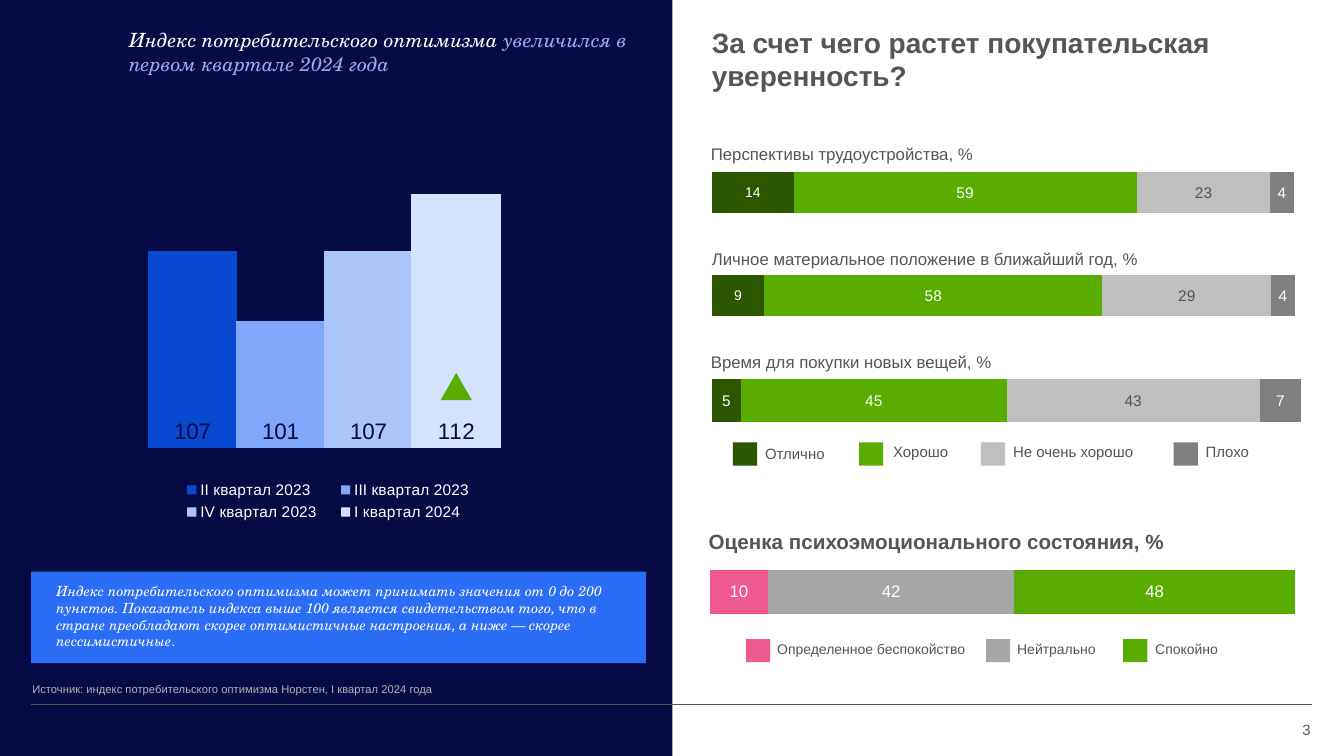
from dataclasses import dataclass

from lxml import etree
from pptx import Presentation, util as u
from pptx.chart import data as chart_data
from pptx.dml import color
from pptx.enum import chart as ch, shapes as sh, text as tx
from pptx.oxml import ns

SANS, SERIF = "Arial", "TeX Gyre Schola"
NAVY, WHITE, GREY = "060A45", "FFFFFF", "555555"
DARK_GREEN, GREEN, SILVER, STEEL = "2D5600", "59AD00", "BFBFBF", "808080"
PINK, NEUTRAL = "EF5890", "A6A6A6"
NO_SIDE_INSET = 0.0


@dataclass
class Box:
    left: float
    top: float
    width: float
    height: float

    def emu(self) -> list:
        return [u.Inches(v) for v in (self.left, self.top, self.width, self.height)]


@dataclass
class Run:
    text: str
    size: float
    ink: str = GREY
    font: str = SANS
    bold: bool = False
    italic: bool = False


@dataclass
class Series:
    name: str
    value: int
    fill: str
    ink: str = WHITE
    size: float = 11


@dataclass
class Rating:
    heading: str
    heading_box: Box
    chart_box: Box
    plot: tuple
    values: tuple
    first_size: float = 10


@dataclass
class Key:
    text: str
    fill: str
    left: float
    label_box: Box


def rgb(hex_code: str) -> color.RGBColor:
    return color.RGBColor.from_string(hex_code)


def add_block(shapes, box: Box, fill: str, kind=sh.MSO_SHAPE.RECTANGLE) -> None:
    block = shapes.add_shape(kind, *box.emu())
    block.shadow.inherit = False
    block.fill.solid()
    block.fill.fore_color.rgb = rgb(fill)
    block.line.fill.background()


def add_text(shapes, box: Box, runs: list[Run], side=0.1, top=0.05, bottom=0.05,
             anchor=tx.MSO_ANCHOR.TOP, align=tx.PP_ALIGN.LEFT, grow=False) -> None:
    frame = shapes.add_textbox(*box.emu()).text_frame
    frame.word_wrap = True
    frame.auto_size = tx.MSO_AUTO_SIZE.SHAPE_TO_FIT_TEXT if grow else tx.MSO_AUTO_SIZE.NONE
    frame.vertical_anchor = anchor
    frame.margin_left = frame.margin_right = u.Inches(side)
    frame.margin_top, frame.margin_bottom = u.Inches(top), u.Inches(bottom)
    paragraph = frame.paragraphs[0]
    paragraph.alignment = align
    for item in runs:
        run = paragraph.add_run()
        run.text = item.text
        set_font(run.font, item.size, item.ink, item.font)
        run.font.bold, run.font.italic = item.bold, item.italic


def set_font(font, size: float, ink: str, name: str = SANS) -> None:
    font.size, font.name = u.Pt(size), name
    font.color.rgb = rgb(ink)


def layout_xml(area: tuple, inner: bool = False):
    """Manual layout element; area is x, y, w, h as fractions of the chart."""
    layout = etree.Element(ns.qn("c:layout"))
    manual = etree.SubElement(layout, ns.qn("c:manualLayout"))
    settings = [("layoutTarget", "inner")] if inner else []
    settings += [("xMode", "edge"), ("yMode", "edge"), *zip("xywh", map(str, area))]
    for tag, value in settings:
        etree.SubElement(manual, ns.qn(f"c:{tag}")).set("val", value)
    return layout


def add_chart(shapes, kind, box: Box, area: tuple, series: list[Series], gap: int,
              overlap: int, position, low=None, high=None):
    data = chart_data.CategoryChartData(number_format="0")
    data.categories = ["1"]
    for item in series:
        data.add_series(item.name, [item.value])
    chart = shapes.add_chart(kind, *box.emu(), data).chart
    chart.has_title = chart.has_legend = False
    set_font(chart.font, 10, GREY)
    for axis in (chart.category_axis, chart.value_axis):
        axis.visible = axis.has_major_gridlines = False
    chart.value_axis.minimum_scale, chart.value_axis.maximum_scale = low, high
    plot = chart.plots[0]
    plot.gap_width, plot.overlap, plot.vary_by_categories = gap, overlap, False
    for drawn, item in zip(plot.series, series):
        drawn.format.fill.solid()
        drawn.format.fill.fore_color.rgb = rgb(item.fill)
        labels = drawn.data_labels
        labels.show_value, labels.position = True, position
        set_font(labels.font, item.size, item.ink)
    plot_area = chart.element.find(".//" + ns.qn("c:plotArea"))
    for old in plot_area.findall(ns.qn("c:layout")):
        plot_area.remove(old)
    plot_area.insert(0, layout_xml(area, inner=True))
    return chart


def add_keys(shapes, keys: list[Key], top: float, size: float) -> None:
    for key in keys:
        add_block(shapes, Box(key.left, top, 0.24, 0.23), key.fill)
        add_text(shapes, key.label_box, [Run(key.text, size)], grow=True)


def add_index_panel(shapes) -> None:
    add_text(shapes, Box(1.28, 0.28, 5.07, 0.57), [
        Run("Индекс потребительского оптимизма ", 14, WHITE, SERIF, italic=True),
        Run("увеличился в первом квартале 2024 года", 14, "A3A9F5", SERIF, italic=True),
    ], side=NO_SIDE_INSET, top=0, bottom=0.07)
    quarters = [("II квартал 2023", 107, "0949D1"), ("III квартал 2023", 101, "80A7FA"),
                ("IV квартал 2023", 107, "ABC5FB"), ("I квартал 2024", 112, "D5E2FD")]
    chart = add_chart(shapes, ch.XL_CHART_TYPE.COLUMN_CLUSTERED, Box(-0.05, 1.25, 6.61, 4),
                      (0.024, 0.082, 0.941, 0.717), [Series(*q, NAVY, 16) for q in quarters],
                      305, 2, ch.XL_LABEL_POSITION.INSIDE_BASE, low=90)
    chart.has_legend = True
    legend = chart.legend
    legend.position, legend.include_in_layout = ch.XL_LEGEND_POSITION.BOTTOM, False
    set_font(legend.font, 11, WHITE)
    legend_xml = chart.element.find(".//" + ns.qn("c:legend"))
    for old in legend_xml.findall(ns.qn("c:layout")):
        legend_xml.remove(old)
    legend_xml.find(ns.qn("c:overlay")).addprevious(layout_xml((0.26, 0.87, 0.48, 0.12)))


def add_ratings(shapes) -> None:
    ratings = [
        Rating("Перспективы трудоустройства, %", Box(7.05, 1.19, 5.99, 0.57),
               Box(6.67, 1.36, 6.45, 1.03), (0.061, 0.3, 0.939, 0.472), (14, 59, 23, 4)),
        Rating("Личное материальное положение в ближайший год, %", Box(7.06, 2.23, 6.65, 0.57),
               Box(7.03, 2.38, 6.1, 1.03), (0.005, 0.3, 0.995, 0.472), (9, 58, 29, 4)),
        Rating("Время для покупки новых вещей, %", Box(7.05, 3.25, 5.99, 0.57),
               Box(7.06, 3.4, 6.22, 1.07), (0, 0.3, 0.987, 0.472), (5, 45, 43, 7), 11),
    ]
    for rating in ratings:
        styles = [(DARK_GREEN, WHITE, rating.first_size), (GREEN, WHITE, 11),
                  (SILVER, GREY, 11), (STEEL, WHITE, 11)]
        series = [Series(f"Series {n}", value, *style)
                  for n, (value, style) in enumerate(zip(rating.values, styles), 1)]
        add_chart(shapes, ch.XL_CHART_TYPE.BAR_STACKED, rating.chart_box, rating.plot, series,
                  20, 100, ch.XL_LABEL_POSITION.CENTER, 0, 105)
        add_text(shapes, rating.heading_box, [Run(rating.heading, 12)], side=NO_SIDE_INSET,
                 top=0.13, bottom=0.13, anchor=tx.MSO_ANCHOR.BOTTOM)
    add_keys(shapes, [
        Key("Отлично", DARK_GREEN, 7.27, Box(7.49, 4.36, 1.14, 0.28)),
        Key("Хорошо", GREEN, 8.52, Box(8.76, 4.34, 1.14, 0.28)),
        Key("Не очень хорошо", SILVER, 9.73, Box(9.95, 4.34, 1.75, 0.28)),
        Key("Плохо", STEEL, 11.64, Box(11.86, 4.34, 1.14, 0.28)),
    ], 4.39, 10.7)


def add_mood(shapes) -> None:
    moods = [Series("Series 1", 10, PINK, size=12), Series("Series 2", 42, NEUTRAL, size=12),
             Series("Series 3", 48, GREEN, size=12)]
    add_chart(shapes, ch.XL_CHART_TYPE.BAR_STACKED_100, Box(6.81, 5.18, 6.21, 1.41),
              (0.037, 0.102, 0.935, 0.783), moods, 150, 100, ch.XL_LABEL_POSITION.CENTER)
    add_text(shapes, Box(6.93, 5.2, 5.82, 0.27),
             [Run("Оценка психоэмоционального состояния, %", 14.7, bold=True)])
    add_keys(shapes.add_group_shape().shapes, [
        Key("Определенное беспокойство", PINK, 7.4, Box(7.61, 6.31, 2.21, 0.27)),
        Key("Нейтрально", NEUTRAL, 9.78, Box(9.99, 6.31, 1.15, 0.27)),
        Key("Спокойно", GREEN, 11.14, Box(11.36, 6.31, 0.93, 0.27)),
    ], 6.34, 10)


def add_footer(shapes) -> None:
    rule = shapes.add_connector(sh.MSO_CONNECTOR.STRAIGHT, u.Inches(0.31), u.Inches(6.99),
                                u.Inches(13.01), u.Inches(6.99))
    rule.line.color.rgb, rule.line.width = rgb(GREY), u.Pt(1)
    etree.SubElement(rule.element.spPr, ns.qn("a:effectLst"))
    source = "Источник: индекс потребительского оптимизма Норстен, I квартал 2024 года"
    add_text(shapes, Box(0.32, 6.7, 6.19, 0.24), [Run(source, 8, "B3B3B3")],
             side=NO_SIDE_INSET, top=0.04, bottom=0.04, anchor=tx.MSO_ANCHOR.BOTTOM)
    add_text(shapes, Box(12.01, 7.04, 0.99, 0.4), [Run("3", 10.7)], side=NO_SIDE_INSET, top=0.04,
             bottom=0.04, anchor=tx.MSO_ANCHOR.MIDDLE, align=tx.PP_ALIGN.RIGHT)


def add_note(shapes) -> None:
    note = ("Индекс потребительского оптимизма может принимать значения от 0 до 200 пунктов. "
            "Показатель индекса выше 100 является свидетельством того, что в стране преобладают "
            "скорее оптимистичные настроения, а ниже — скорее пессимистичные")
    add_block(shapes, Box(0.31, 5.67, 6.1, 0.91), "2C6DF6")
    add_text(shapes, Box(0.46, 5.73, 5.95, 0.77),
             [Run(note, 10, WHITE, SERIF, italic=True), Run(".", 10, WHITE)], grow=True)


def main() -> None:
    deck = Presentation()
    deck.slide_width, deck.slide_height = u.Inches(13.33), u.Inches(7.5)
    shapes = deck.slides.add_slide(deck.slide_layouts[6]).shapes
    add_block(shapes, Box(0, 0, 6.67, 7.5), NAVY)
    add_footer(shapes)
    add_index_panel(shapes)
    add_ratings(shapes.add_group_shape().shapes)
    add_text(shapes, Box(7.06, 0.2, 5.9, 0.38),
             [Run("За счет чего растет покупательская уверенность?", 20, bold=True)],
             side=NO_SIDE_INSET)
    add_mood(shapes)
    add_note(shapes)
    add_block(shapes, Box(4.37, 3.7, 0.31, 0.27), GREEN, sh.MSO_SHAPE.ISOSCELES_TRIANGLE)
    deck.save("out.pptx")


if __name__ == "__main__":
    main()
